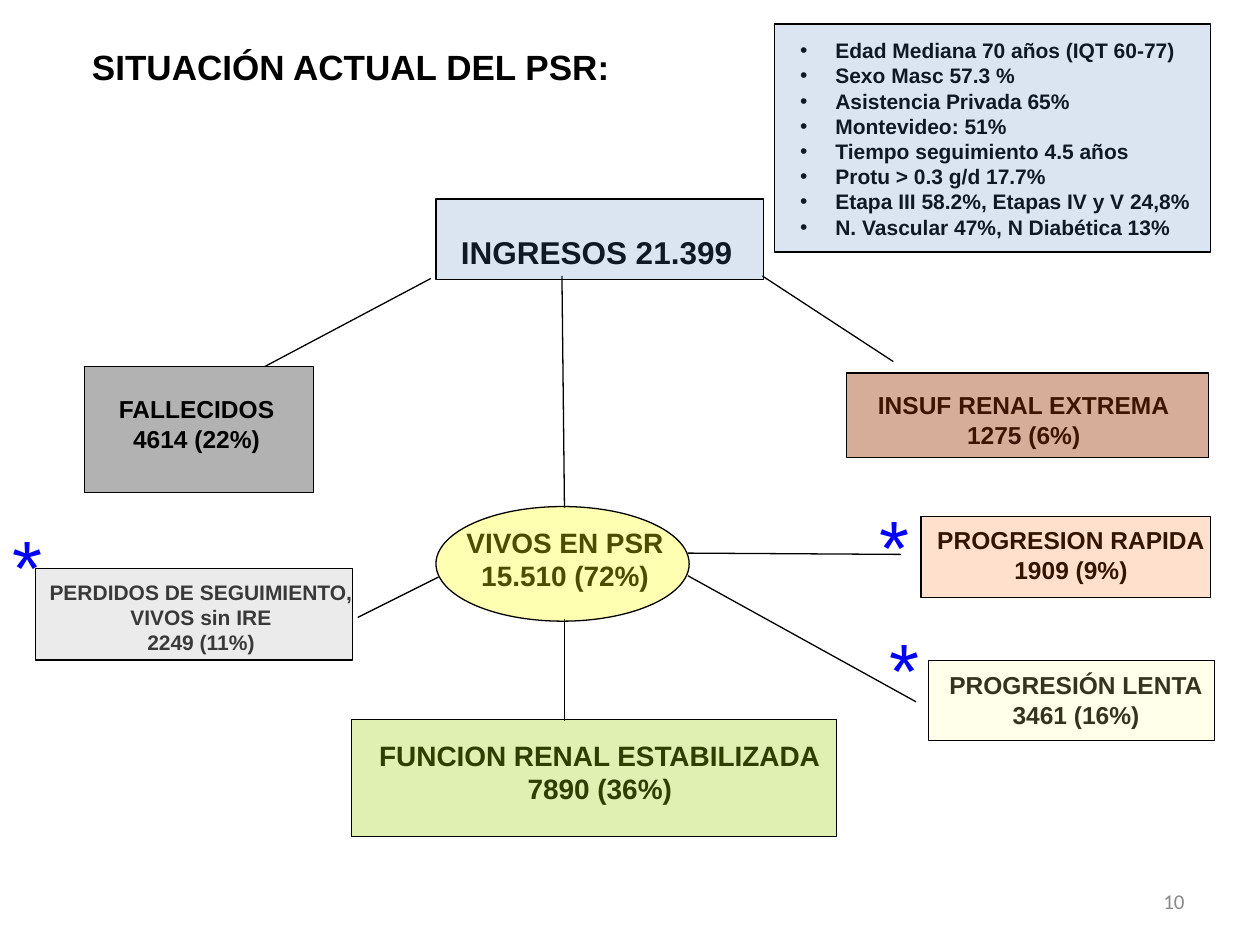
"""Build the PSR status slide: a patient-flow diagram with a summary list."""
from dataclasses import dataclass

import lxml.etree
import pptx
import pptx.dml.color
import pptx.enum.shapes
import pptx.enum.text
import pptx.oxml.ns
import pptx.util

Inches = pptx.util.Inches
Pt = pptx.util.Pt
ALIGN = pptx.enum.text.PP_ALIGN
ANCHOR = pptx.enum.text.MSO_ANCHOR
SHAPE = pptx.enum.shapes.MSO_SHAPE
Box = tuple[float, float, float, float]

COLORS = {
    "black": "000000",
    "blue": "4F81BD",
    "brown": "993300",
    "orange": "FF6600",
    "cream": "FFFF99",
    "green": "99CC00",
    "yellow": "FFFF00",
    "silver": "C0C0C0",
    "star": "0000FF",
    "number": "888888",
}


@dataclass(frozen=True)
class Node:
    lines: tuple[str, ...]
    size: int
    text_box: Box
    frame: Box
    color: str
    opacity: int
    shape: int = SHAPE.RECTANGLE


@dataclass(frozen=True)
class Link:
    x1: float
    y1: float
    x2: float
    y2: float


NODES = (
    Node(("INGRESOS 21.399",), 18, (3.56, 1.8, 2.35, 0.4),
         (3.46, 1.58, 2.6, 0.64), "blue", 20),
    Node(("FALLECIDOS", "4614 (22%)"), 14, (0.84, 3.08, 1.44, 0.57),
         (0.67, 2.91, 1.82, 1), "black", 30),
    Node(("INSUF RENAL EXTREMA", "1275 (6%)"), 14, (6.87, 3.05, 2.51, 0.57),
         (6.72, 2.96, 2.87, 0.67), "brown", 40),
    Node(("VIVOS EN PSR", "15.510 (72%)"), 16, (3.6, 4.12, 1.77, 0.64),
         (3.46, 4.02, 2.01, 0.91), "yellow", 30, SHAPE.OVAL),
    Node(("FUNCION RENAL ESTABILIZADA", "7890 (36%)"), 16, (2.9, 5.81, 3.72, 0.64),
         (2.79, 5.71, 3.85, 0.93), "green", 30),
    Node(("PERDIDOS DE SEGUIMIENTO,", "VIVOS sin IRE", "2249 (11%)"), 12,
         (0.29, 4.55, 2.61, 0.7), (0.28, 4.51, 2.52, 0.73), "silver", 30),
    Node(("PROGRESION RAPIDA", "1909 (9%)"), 14, (7.34, 4.12, 2.32, 0.57),
         (7.31, 4.1, 2.3, 0.64), "orange", 20),
    Node(("PROGRESIÓN LENTA", "3461 (16%)"), 14, (7.43, 5.27, 2.22, 0.57),
         (7.37, 5.24, 2.27, 0.64), "cream", 20),
)
LINKS = (
    Link(4.46, 2.19, 4.48, 4.03),
    Link(3.42, 2.21, 2.1, 2.91),
    Link(6.05, 2.19, 7.09, 2.87),
    Link(4.48, 4.91, 4.48, 5.72),
    Link(3.48, 4.58, 2.84, 4.9),
    Link(5.46, 4.57, 7.27, 5.57),
    Link(5.46, 4.39, 7.15, 4.4),
)
STARS = ((6.88, 3.91), (6.96, 4.88), (0, 4.07))
SUMMARY = (
    "Edad Mediana 70 años (IQT 60-77)",
    "Sexo Masc 57.3 %",
    "Asistencia Privada 65%",
    "Montevideo: 51%",
    "Tiempo seguimiento 4.5 años",
    "Protu > 0.3 g/d 17.7%",
    "Etapa III 58.2%, Etapas IV y V 24,8%",
    "N. Vascular 47%, N Diabética 13%",
)


def rgb(name: str) -> pptx.dml.color.RGBColor:
    """Return a named colour."""
    return pptx.dml.color.RGBColor.from_string(COLORS[name])


def place(sp, box: Box) -> None:
    """Move and size a shape, in inches."""
    sp.left, sp.top, sp.width, sp.height = map(Inches, box)


def write(tf, lines, size: int, align=ALIGN.LEFT, color: str = "black",
          bold: bool = True, font: str = "Arial", wrap: bool = False,
          anchor=ANCHOR.TOP) -> None:
    """Fill a text frame with one paragraph per line."""
    tf.word_wrap = wrap
    tf.auto_size = pptx.enum.text.MSO_AUTO_SIZE.NONE
    tf.vertical_anchor = anchor
    for i, line in enumerate(lines):
        p = tf.paragraphs[0] if i == 0 else tf.add_paragraph()
        p.alignment = align
        p.space_before = Pt(0)
        r = p.add_run()
        r.text = line
        r.font.size, r.font.bold, r.font.name = Pt(size), bold, font
        r.font.color.rgb = rgb(color)


def add_text(slide, box: Box, lines, size: int, **style) -> None:
    """Add a text box."""
    sp = slide.shapes.add_textbox(*map(Inches, box))
    write(sp.text_frame, lines, size, **style)


def add_frame(slide, box: Box, color: str, opacity: int,
              shape=SHAPE.RECTANGLE) -> None:
    """Add an outlined shape with a translucent fill."""
    sp = slide.shapes.add_shape(shape, *map(Inches, box))
    sp.shadow.inherit = False
    sp.fill.solid()
    sp.fill.fore_color.rgb = rgb(color)
    clr = sp.fill._xPr.find(".//" + pptx.oxml.ns.qn("a:srgbClr"))
    alpha = lxml.etree.SubElement(clr, pptx.oxml.ns.qn("a:alpha"))
    alpha.set("val", str(opacity * 1000))
    sp.line.color.rgb = rgb("black")
    sp.line.width = Pt(0.75)


def add_link(slide, link: Link) -> None:
    """Add a thin straight connector."""
    sp = slide.shapes.add_connector(
        pptx.enum.shapes.MSO_CONNECTOR.STRAIGHT,
        *map(Inches, (link.x1, link.y1, link.x2, link.y2)))
    sp.line.color.rgb = rgb("black")
    sp.line.width = Pt(0.75)
    lxml.etree.SubElement(sp._element.spPr, pptx.oxml.ns.qn("a:effectLst"))


def add_summary(slide) -> None:
    """Fill the body placeholder with the bulleted summary and frame it."""
    sp = slide.placeholders[1]
    place(sp, (6.25, 0.25, 3.45, 1.7))
    write(sp.text_frame, SUMMARY, 12, wrap=True)
    for p in sp.text_frame.paragraphs:
        pPr = p._p.get_or_add_pPr()
        pPr.set("marL", str(Inches(0.28)))
        pPr.set("indent", str(-Inches(0.28)))
    add_frame(slide, (6.15, 0.19, 3.46, 1.81), "blue", 20)


def main() -> None:
    """Build and save the slide."""
    prs = pptx.Presentation()
    prs.slide_width, prs.slide_height = Inches(10), Inches(7.5)
    slide = prs.slides.add_slide(prs.slide_layouts[1])
    title = slide.shapes.title
    place(title, (0.63, 0.31, 4.33, 0.43))
    write(title.text_frame, ["SITUACIÓN ACTUAL DEL PSR:"], 20)
    add_summary(slide)
    for link in LINKS:
        add_link(slide, link)
    for node in NODES:
        add_text(slide, node.text_box, node.lines, node.size, align=ALIGN.CENTER)
        add_frame(slide, node.frame, node.color, node.opacity, node.shape)
    for x, y in STARS:
        add_text(slide, (x, y, 0.44, 0.83), ["*"], 44, color="star", bold=False)
    add_text(slide, (7.17, 6.95, 2.33, 0.4), ["10"], 12, align=ALIGN.RIGHT,
             color="number", bold=False, font="Calibri", wrap=True,
             anchor=ANCHOR.MIDDLE)
    prs.save("out.pptx")


if __name__ == "__main__":
    main()
